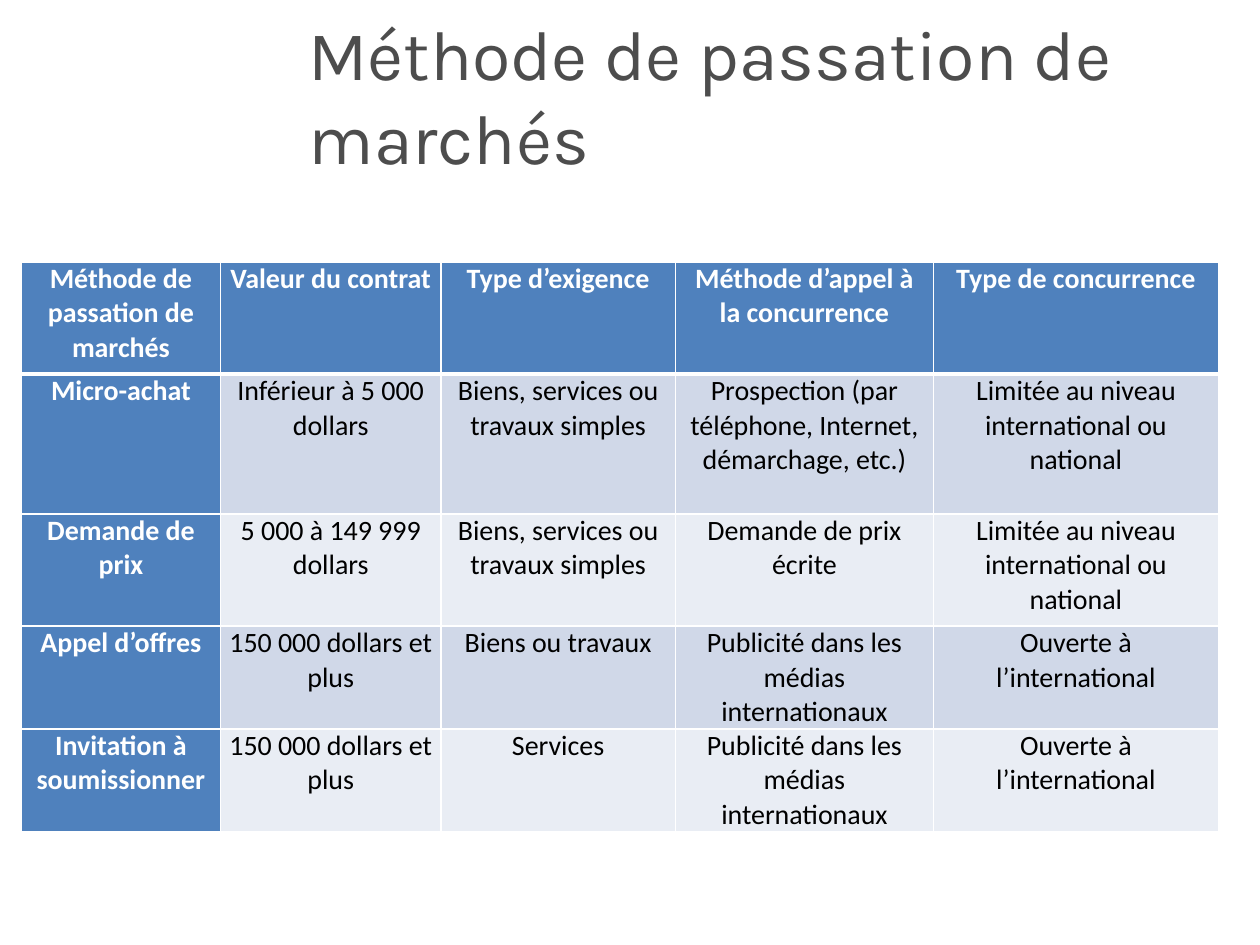
from dataclasses import dataclass

from lxml.etree import SubElement
from pptx import Presentation
from pptx.dml.color import RGBColor
from pptx.enum.text import MSO_ANCHOR, MSO_AUTO_SIZE, PP_ALIGN
from pptx.oxml.ns import qn
from pptx.util import Inches, Pt


@dataclass(frozen=True)
class Theme:
    title_font: str = "Karla"
    table_font: str = "Calibri"
    title_size: int = 40
    table_size: int = 16
    title: str = "4D4D4D"
    header: str = "4F81BD"
    bands: tuple = ("D0D8E8", "E9EDF4")
    light: str = "FFFFFF"
    dark: str = "000000"
    thin: int = 1
    thick: int = 3


THEME = Theme()

TITLE = "Méthode de passation de marchés"
COLUMN_WIDTHS = (1.58, 1.75, 1.86, 2.05, 2.26)
ROW_HEIGHTS = (0.89, 1.11, 0.89, 0.6, 0.6)
METHODS = (
    ("Méthode de passation de marchés", "Valeur du contrat", "Type d’exigence",
     "Méthode d’appel à la concurrence", "Type de concurrence"),
    ("Micro-achat", "Inférieur à 5 000 dollars", "Biens, services ou travaux simples",
     "Prospection (par téléphone, Internet, démarchage, etc.)",
     "Limitée au niveau international ou national"),
    ("Demande de prix", "5 000 à 149 999 dollars", "Biens, services ou travaux simples",
     "Demande de prix écrite", "Limitée au niveau international ou national"),
    ("Appel d’offres", "150 000 dollars et plus", "Biens ou travaux",
     "Publicité dans les médias internationaux", "Ouverte à l’international"),
    ("Invitation à soumissionner", "150 000 dollars et plus", "Services",
     "Publicité dans les médias internationaux", "Ouverte à l’international"),
)


def set_font(p, name, size, color, bold=False):
    p.font.name = name
    p.font.size = Pt(size)
    p.font.bold = bold
    p.font.color.rgb = RGBColor.from_string(color)


def set_title(slide):
    sp = slide.shapes.title
    sp.left, sp.top = Inches(2.35), Inches(0.46)
    sp.width, sp.height = Inches(7.32), Inches(0.58)
    tf = sp.text_frame
    tf.text = TITLE
    tf.word_wrap = True
    tf.auto_size = MSO_AUTO_SIZE.NONE
    tf.vertical_anchor = MSO_ANCHOR.MIDDLE
    p = tf.paragraphs[0]
    p.alignment = PP_ALIGN.LEFT
    set_font(p, THEME.title_font, THEME.title_size, THEME.title)


def set_borders(cell, top, bottom):
    """Draw light borders; must run before the cell's fill is set."""
    tc_pr = cell._tc.get_or_add_tcPr()
    widths = {"lnL": THEME.thin, "lnR": THEME.thin, "lnT": top, "lnB": bottom}
    for tag, width in widths.items():
        line = SubElement(tc_pr, qn(f"a:{tag}"), w=str(Pt(width)))
        fill = SubElement(line, qn("a:solidFill"))
        SubElement(fill, qn("a:srgbClr"), val=THEME.light)


def format_cell(cell, text, row, col):
    is_header = row == 0 or col == 0
    cell.margin_left = cell.margin_right = Inches(0.07)
    cell.margin_top = cell.margin_bottom = 0
    set_borders(cell,
                top=THEME.thick if row == 1 else THEME.thin,
                bottom=THEME.thick if row == 0 else THEME.thin)
    cell.fill.solid()
    color = THEME.header if is_header else THEME.bands[(row - 1) % 2]
    cell.fill.fore_color.rgb = RGBColor.from_string(color)
    cell.text = text
    p = cell.text_frame.paragraphs[0]
    p.alignment = PP_ALIGN.CENTER
    set_font(p, THEME.table_font, THEME.table_size,
             THEME.light if is_header else THEME.dark, is_header)


def add_methods_table(slide):
    frame = slide.shapes.add_table(
        len(METHODS), len(COLUMN_WIDTHS), Inches(0.17), Inches(2.08),
        Inches(sum(COLUMN_WIDTHS)), Inches(sum(ROW_HEIGHTS)))
    table = frame.table
    table.first_col = True
    for column, width in zip(table.columns, COLUMN_WIDTHS):
        column.width = Inches(width)
    for row, height in zip(table.rows, ROW_HEIGHTS):
        row.height = Inches(height)
    for row, texts in enumerate(METHODS):
        for col, text in enumerate(texts):
            format_cell(table.cell(row, col), text, row, col)


def main():
    prs = Presentation()
    prs.slide_width, prs.slide_height = Inches(10), Inches(7.5)
    slide = prs.slides.add_slide(prs.slide_layouts.get_by_name("Title Only"))
    set_title(slide)
    add_methods_table(slide)
    prs.save("out.pptx")


if __name__ == "__main__":
    main()
